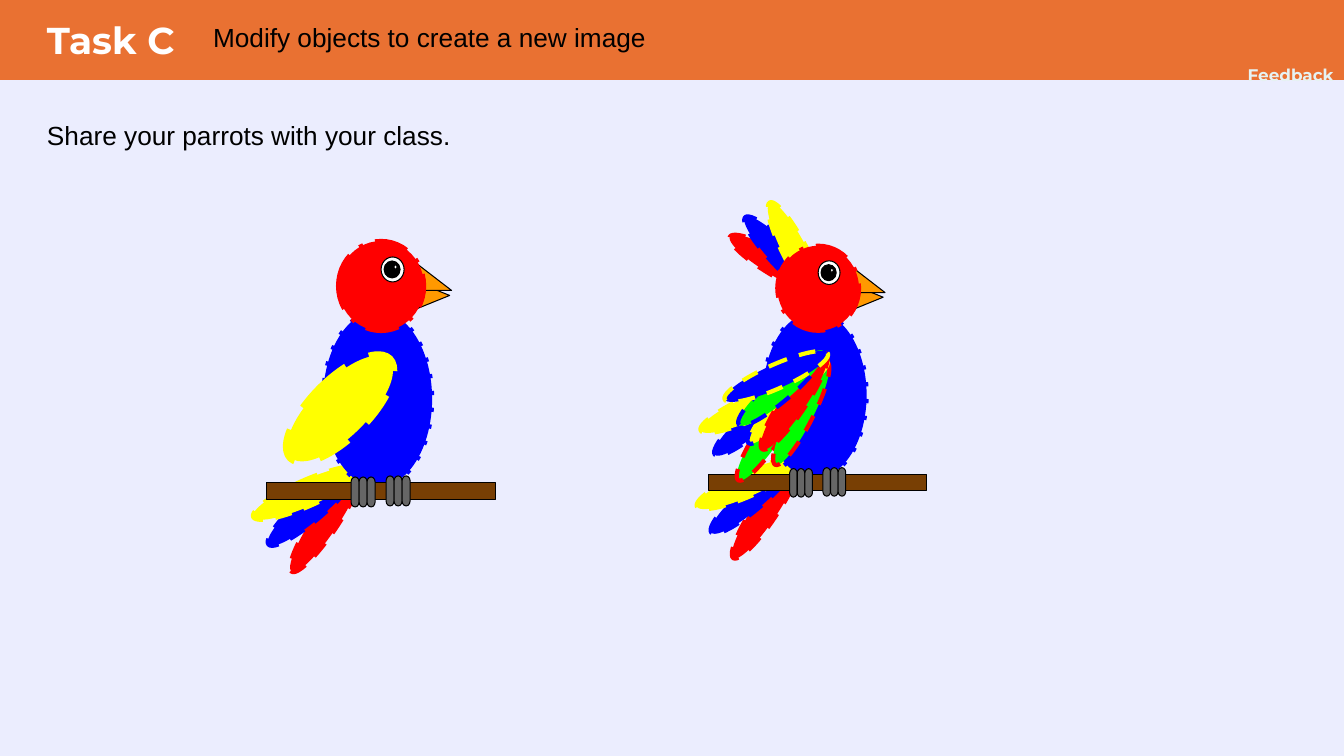
import pptx
import pptx.dml.color
import pptx.enum.dml
import pptx.enum.shapes
import pptx.enum.text
import pptx.oxml.ns
import pptx.util
from lxml import etree

RGBColor = pptx.dml.color.RGBColor
ORANGE = RGBColor(0xE9, 0x71, 0x32)
LAVENDER = RGBColor(0xEB, 0xED, 0xFE)
PALE = RGBColor(0xE6, 0xF2, 0xF2)
WHITE = RGBColor(0xFF, 0xFF, 0xFF)
BLACK = RGBColor(0x00, 0x00, 0x00)
RED = RGBColor(0xFF, 0x00, 0x00)
GREEN = RGBColor(0x00, 0xFF, 0x00)
BLUE = RGBColor(0x00, 0x00, 0xFF)
YELLOW = RGBColor(0xFF, 0xFF, 0x00)
BEAK = RGBColor(0xFF, 0x99, 0x00)
WOOD = RGBColor(0x78, 0x3F, 0x04)
GREY = RGBColor(0x66, 0x66, 0x66)

SHAPE = pptx.enum.shapes.MSO_SHAPE
OVAL = SHAPE.OVAL
ANCHOR = pptx.enum.text.MSO_ANCHOR
ALIGN = pptx.enum.text.PP_ALIGN
FIT = pptx.enum.text.MSO_AUTO_SIZE
PX = 914400 / 100.8

# Content: text, box in px, font, paragraph and frame formats
BODY_FONT = {"name": "Arial", "size": pptx.util.Pt(18.7)}
TITLE = ("Modify objects to create a new image", (213, 21, 844, 40), BODY_FONT, BLACK,
         {"alignment": ALIGN.LEFT}, {"vertical_anchor": ANCHOR.TOP, "auto_size": FIT.NONE})
BODY = ("Share your parrots with your class.", (47, 119, 1211, 49), BODY_FONT, BLACK,
        {"space_before": pptx.util.Pt(0), "space_after": pptx.util.Pt(13.3)},
        {"vertical_anchor": ANCHOR.TOP, "auto_size": FIT.SHAPE_TO_FIT_TEXT})
LABELS = [
    ("Feedback", (1246, 65, 89, 20),
     {"name": "Montserrat", "size": pptx.util.Pt(12), "bold": True}, PALE,
     {"alignment": ALIGN.CENTER}, {"auto_size": FIT.SHAPE_TO_FIT_TEXT}),
    ("Task C", (47, 6, 194, 56),
     {"name": "Montserrat", "size": pptx.util.Pt(26.7), "bold": True}, WHITE,
     {}, {"vertical_anchor": ANCHOR.BOTTOM}),
]

# Parrot parts: preset, box in px, rotation, fill, line colour, line width, dash, adjustment
CLAWS = [(SHAPE.FLOWCHART_TERMINATOR, (left + 8 * toe, top, 30, 8), 90, GREY, BLACK, 0.75, None, None)
         for left, top in ((375, 487), (340, 488)) for toe in range(3)]
PARROT = [
    (OVAL, (313, 460, 25, 122), 33.8, RED, RED, 3, "dash", None),
    (OVAL, (300, 447, 26, 118), 49.1, BLUE, BLUE, 3, "dash", None),
    (OVAL, (294, 434, 26, 118), 66, YELLOW, YELLOW, 3, "dash", None),
    (OVAL, (323, 311, 109, 176), 0, BLUE, BLUE, 3, "dot", None),
    (SHAPE.ISOSCELES_TRIANGLE, (416, 277, 30, 37), 90, BEAK, BLACK, 0.75, None, 0.5),
    (SHAPE.RECTANGLE, (266, 483, 229, 17), 0, WOOD, BLACK, 0.75, None, None),
    (SHAPE.ISOSCELES_TRIANGLE, (417, 256, 30, 39), 90, BEAK, BLACK, 0.75, None, 1),
    *CLAWS,
    (OVAL, (338, 241, 86, 90), 0, RED, RED, 3, "lgDashDot", None),
    (OVAL, (381, 257, 23, 25), 0, WHITE, BLACK, 0.75, None, None),
    (OVAL, (384, 261, 16, 17), 0, BLACK, BLACK, 0.75, None, None),
    (OVAL, (394, 265, 3, 4), 0, WHITE, BLACK, 0.75, None, None),
]
PLAIN_WING = [(OVAL, (312, 339, 56, 139), 45, YELLOW, YELLOW, 6, "dash", None)]

# Loose feathers of the second parrot: left, top, height, rotation, fill, line colour
CREST = [
    (766, 209, 112, 120.5, RED, RED),
    (773, 201, 115, 135.9, BLUE, BLUE),
    (784, 196, 115, 152.7, YELLOW, YELLOW),
]
FEATHERED_WING = [
    (758, 375, 115, 33.8, GREEN, RED),
    (745, 362, 112, 49.1, BLUE, BLUE),
    (740, 351, 113, 66, YELLOW, YELLOW),
    (789, 356, 115, 26.9, GREEN, RED),
    (775, 343, 115, 42.3, YELLOW, BLUE),
    (767, 334, 112, 59.2, YELLOW, YELLOW),
    (782, 344, 115, 33.8, RED, RED),
    (769, 332, 112, 49.1, GREEN, BLUE),
    (764, 320, 113, 66, BLUE, YELLOW),
]
FEATHER_WIDTH = 24
SECOND_SCALE = (0.95, 0.945)
SECOND_SHIFT = (456, 18)


def emu(box):
    return [round(value * PX) for value in box]


def format_all(target, values):
    for name, value in values.items():
        setattr(target, name, value)


def write(shape, text, box, font, color, paragraph_format, frame_format):
    format_all(shape, dict(zip(("left", "top", "width", "height"), emu(box))))
    frame = shape.text_frame
    format_all(frame, {"margin_left": 0, "margin_top": 0, "margin_right": 0,
                       "margin_bottom": 0, "word_wrap": True, **frame_format})
    frame.text = text
    paragraph = frame.paragraphs[0]
    format_all(paragraph, paragraph_format)
    format_all(paragraph.runs[0].font, font)
    paragraph.runs[0].font.color.rgb = color


def draw(shapes, preset, box, rotation, fill, line, width, dash, adjustment):
    shape = shapes.add_shape(preset, *emu(box))
    shape.shadow.inherit = False
    shape.rotation = rotation
    shape.fill.solid()
    shape.fill.fore_color.rgb = fill
    shape.line.color.rgb = line
    shape.line.width = pptx.util.Pt(width)
    if dash:
        shape.line.dash_style = pptx.enum.dml.MSO_LINE.DASH
        shape.line._ln.find(pptx.oxml.ns.qn("a:prstDash")).set("val", dash)
    if adjustment is not None:
        shape.adjustments[0] = adjustment


def feathers(rows):
    return [(OVAL, (left, top, FEATHER_WIDTH, height), rotation, fill, line, 3, "dash", None)
            for left, top, height, rotation, fill, line in rows]


def moved(part):
    preset, (left, top, width, height), *style = part
    (across, down), (right, lower) = SECOND_SCALE, SECOND_SHIFT
    box = (left * across + right, top * down + lower, width * across, height * down)
    return (preset, box, *style)


def main():
    presentation = pptx.Presentation()
    presentation.slide_width = pptx.util.Inches(13.33)
    presentation.slide_height = pptx.util.Inches(7.5)
    slide = presentation.slides.add_slide(presentation.slide_layouts[1])
    slide.background.fill.solid()
    slide.background.fill.fore_color.rgb = LAVENDER

    # Header bar, behind the placeholders
    bar = slide.shapes.add_shape(SHAPE.RECTANGLE, *emu((0, 0, 1344, 80)))
    bar.shadow.inherit = False
    bar.fill.solid()
    bar.fill.fore_color.rgb = ORANGE
    bar.line.fill.background()
    slide.shapes._spTree.insert(2, bar._element)

    # Texts
    for label in LABELS:
        write(slide.shapes.add_textbox(0, 0, 0, 0), *label)
    write(slide.shapes.title, *TITLE)
    body = slide.placeholders[1]
    write(body, *BODY)
    properties = body.text_frame.paragraphs[0]._p.get_or_add_pPr()
    properties.set("marL", "0")
    properties.set("indent", "0")
    etree.SubElement(properties, pptx.oxml.ns.qn("a:buNone"))

    # Parrots
    first = PARROT + PLAIN_WING
    second = feathers(CREST) + [moved(part) for part in PARROT] + feathers(FEATHERED_WING)
    for parts in (first, second):
        group = slide.shapes.add_group_shape()
        for part in parts:
            draw(group.shapes, *part)

    presentation.save("out.pptx")


if __name__ == "__main__":
    main()
